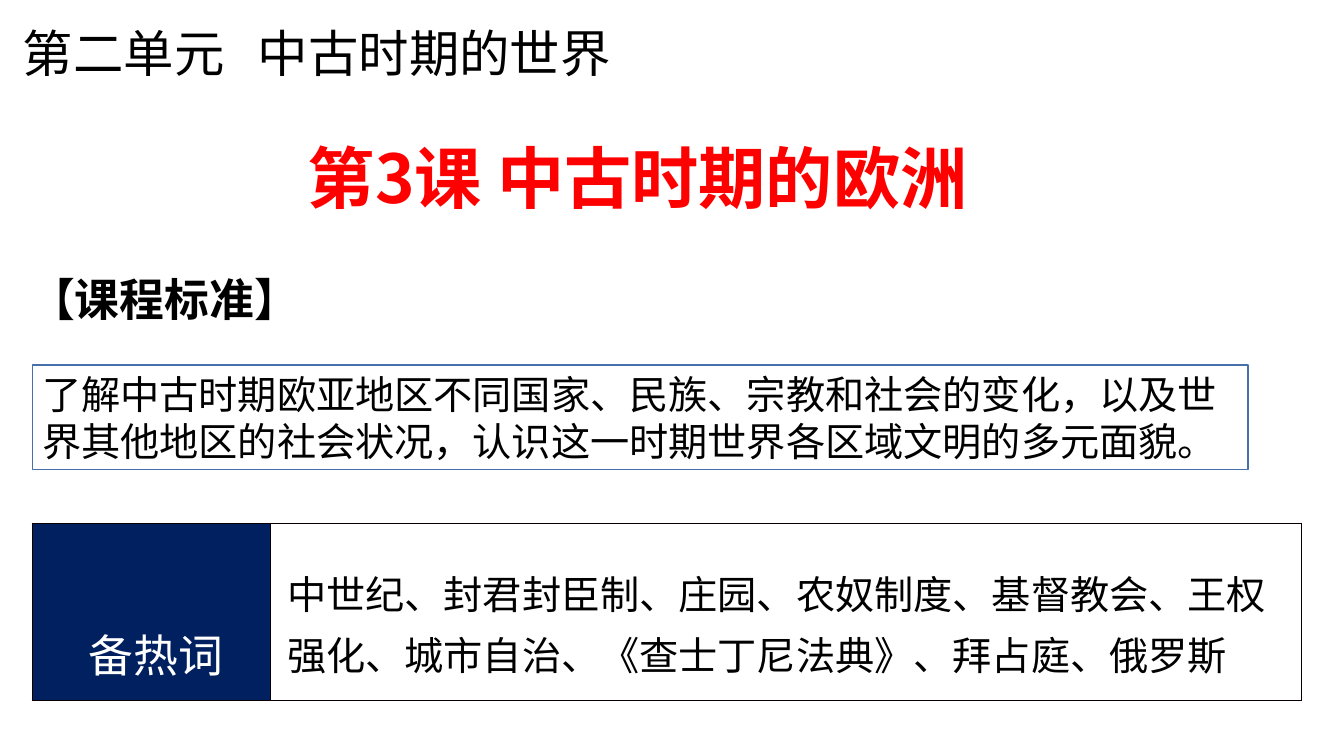
import dataclasses

import lxml.etree
import pptx
import pptx.dml.color
import pptx.enum.shapes
import pptx.enum.text
import pptx.oxml.ns
import pptx.util

PX = 9144
ALIGN = pptx.enum.text.PP_ALIGN


@dataclasses.dataclass(frozen=True)
class Theme:
    """Colours, fonts and type sizes of the lesson opener."""
    ink: str = "000000"
    accent: str = "FF0000"
    navy: str = "002060"
    white: str = "FFFFFF"
    frame: str = "476FAA"
    border: str = "080000"
    font: str = "Noto Sans CJK SC"
    unit_font: str = "Arial"
    title: int = 48
    unit: int = 36
    label: int = 32
    body: int = 28


THEME = Theme()


def emu(*lengths):
    """Turn px lengths into EMU."""
    return [pptx.util.Emu(length * PX) for length in lengths]


def rgb(value):
    """Return a colour from its hex value."""
    return pptx.dml.color.RGBColor.from_string(value)


def child(parent, tag, **attributes):
    """Append a DrawingML element to a parent."""
    name = pptx.oxml.ns.qn(f"a:{tag}")
    return lxml.etree.SubElement(parent, name, **attributes)


def write(frame, text, size, color=THEME.ink, bold=False, font=THEME.font,
          align=ALIGN.LEFT, spacing=None):
    """Write one styled run into a text frame and return its paragraph."""
    frame.word_wrap = True
    para = frame.paragraphs[0]
    para.alignment = align
    para.line_spacing = spacing
    span = para.add_run()
    span.text = text
    span.font.size = pptx.util.Pt(size)
    span.font.bold = bold
    span.font.name = font
    span.font.color.rgb = rgb(color)
    child(span.font._element, "ea", typeface=font)
    return para


def add_text(page, box, text, size, **style):
    """Place a text box and return its paragraph."""
    frame = page.shapes.add_textbox(*emu(*box)).text_frame
    return write(frame, text, size, **style)


def add_headings(page, box):
    """Place the unit name and the lesson title."""
    left, top, width, height = box
    unit = add_text(page, (left, top, 636, 71), "第二单元\t中古时期的世界",
                    THEME.unit, font=THEME.unit_font)
    stops = child(unit._p.get_or_add_pPr(), "tabLst")
    child(stops, "tab", pos=str(emu(233)[0]), algn="l")
    add_text(page, (left + 80, top + 122, width, height - 122),
             "第3课 中古时期的欧洲", THEME.title, color=THEME.accent,
             bold=True, align=ALIGN.CENTER, spacing=0.9)


def add_standard(page, box):
    """Place the course standard label and its framed statement."""
    left, top, width, height = box
    add_text(page, (left - 12, top, 667, 75), "【课程标准】", THEME.label,
             bold=True, spacing=1.2)
    panel = page.shapes.add_shape(
        pptx.enum.shapes.MSO_SHAPE.RECTANGLE,
        *emu(left, top + 108, width, height - 108))
    panel.shadow.inherit = False
    panel.fill.background()
    panel.line.color.rgb = rgb(THEME.frame)
    panel.line.width = pptx.util.Pt(1)
    panel.text_frame.vertical_anchor = pptx.enum.text.MSO_ANCHOR.TOP
    write(panel.text_frame,
          "了解中古时期欧亚地区不同国家、民族、宗教和社会的变化，以及世界其他地区的"
          "社会状况，认识这一时期世界各区域文明的多元面貌。", THEME.body)


def style_cell(cell, fill):
    """Give a table cell its borders and fill."""
    properties = cell._tc.get_or_add_tcPr()
    for side in ("lnL", "lnR", "lnT", "lnB"):
        line = child(properties, side, w=str(pptx.util.Pt(1)))
        child(child(line, "solidFill"), "srgbClr", val=THEME.border)
    if fill:
        cell.fill.solid()
        cell.fill.fore_color.rgb = rgb(fill)
    else:
        cell.fill.background()


def add_keywords(page, box):
    """Place the keyword table and the words over its right cell."""
    left, top, width, height = box
    label_width = 236
    table = page.shapes.add_table(1, 2, *emu(*box)).table
    table.first_row = table.horz_banding = False
    columns = (label_width, width - label_width)
    for column, length in zip(table.columns, emu(*columns)):
        column.width = length
    label, words = table.rows[0].cells
    style_cell(label, THEME.navy)
    style_cell(words, None)
    label.margin_left, label.margin_right = emu(7, 7)
    label.margin_top = label.margin_bottom = 0
    write(label.text_frame, " 备热词", THEME.label, color=THEME.white,
          align=ALIGN.CENTER, spacing=2.5)
    offset = label_width + 7
    add_text(page, (left + offset, top + 28, width - offset, 133),
             "中世纪、封君封臣制、庄园、农奴制度、基督教会、王权强化、城市自治、"
             "《查士丁尼法典》、拜占庭、俄罗斯", THEME.body, spacing=1.3)


def main():
    """Build the lesson opener and save it."""
    deck = pptx.Presentation()
    deck.slide_width, deck.slide_height = emu(1333, 750)
    page = deck.slides.add_slide(deck.slide_layouts[6])
    add_headings(page, (13, 17, 1079, 196))
    add_standard(page, (32, 254, 1206, 212))
    add_keywords(page, (32, 519, 1259, 176))
    deck.save("out.pptx")


if __name__ == "__main__":
    main()
